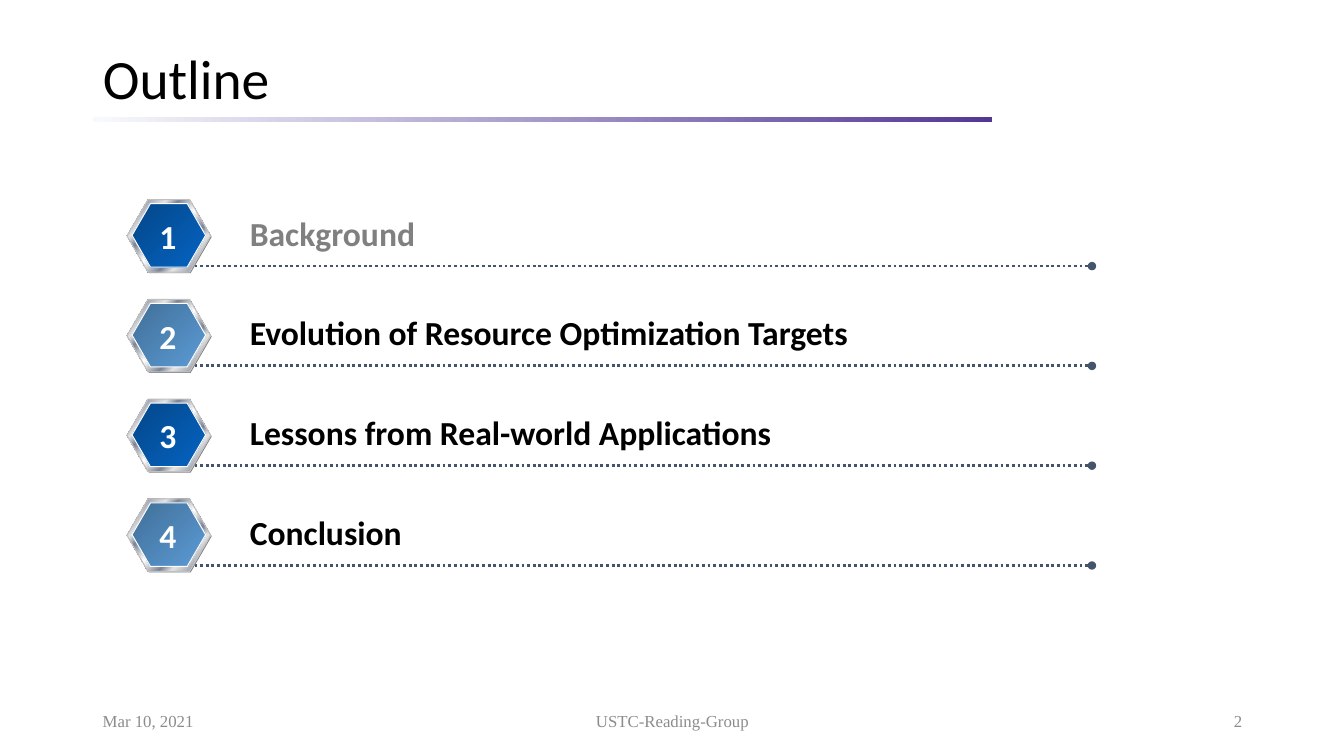
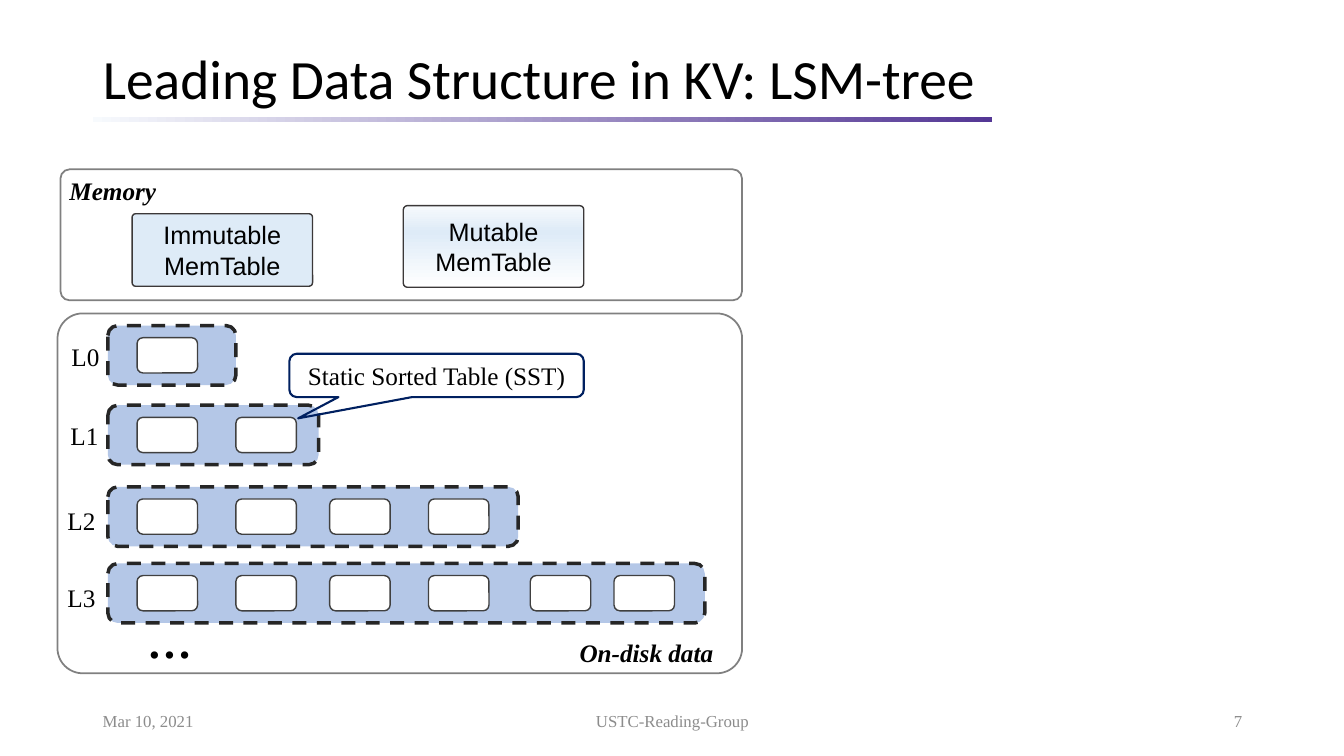
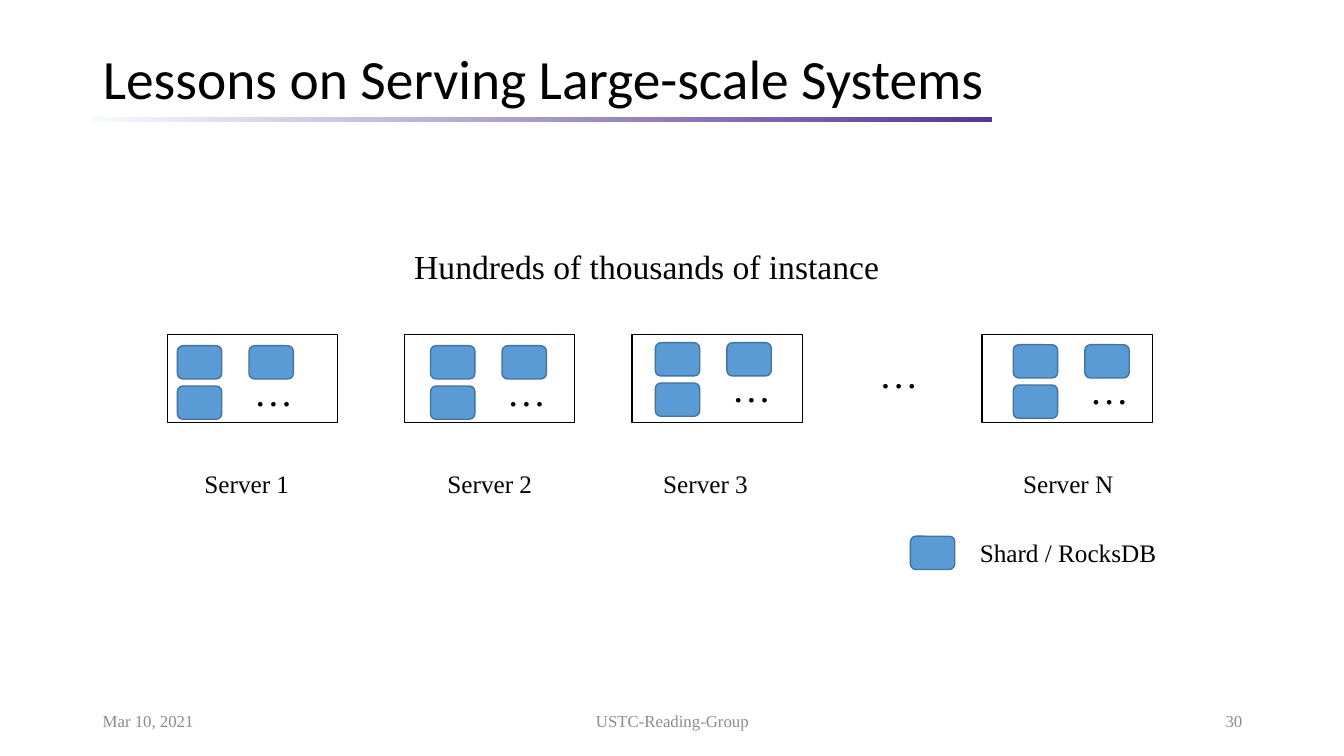
from lxml import etree
from pptx import Presentation
from pptx import util as u
from pptx.dml.color import RGBColor
from pptx.enum import dml, shapes, text
from pptx.oxml.ns import qn

SERIF, SANS, ARIAL = "Times New Roman", "Calibri", "Arial"
BLACK, WHITE, GREY, FOOTER_GREY = "000000", "FFFFFF", "808080", "8C8C8C"
DARK_BLUE, MID_BLUE = ("04478A", "0563C1"), ("416F98", "5B9BD5")
LEVEL_BLUE, SHARD_BLUE, PALE_BLUE, MIST = "B4C7E7", "5B9BD5", "DEEBF7", "F7FAFD"
METAL = list(zip((0, 7, 26, 34, 46, 50, 54, 66, 74, 93, 100),
                 ("E6E6E6", "7D8496", "E6E6E6", "7D8496", "E6E6E6", WHITE,
                  "E6E6E6", "7D8496", "E6E6E6", "7D8496", "E6E6E6")))
SHAPE = shapes.MSO_SHAPE
ALIGN = {"l": text.PP_ALIGN.LEFT, "c": text.PP_ALIGN.CENTER, "r": text.PP_ALIGN.RIGHT}
DASH, DOT = dml.MSO_LINE.DASH, dml.MSO_LINE.ROUND_DOT


def rgb(code):
    return RGBColor.from_string(code)


def write(frame, content, size=18, font=SERIF, color=BLACK, bold=False,
          italic=False, align="l", middle=False, wrap=True, spacing=None):
    frame.word_wrap = wrap
    frame.auto_size = text.MSO_AUTO_SIZE.NONE
    frame.vertical_anchor = text.MSO_ANCHOR.MIDDLE if middle else text.MSO_ANCHOR.TOP
    frame.text = content
    line = frame.paragraphs[0]
    line.alignment = ALIGN[align]
    line.line_spacing = spacing
    style = line.runs[0].font
    style.name, style.size, style.color.rgb = font, u.Pt(size), rgb(color)
    style.bold, style.italic = bold, italic


def gradient(shape, stops, angle):
    """Fill with (percent, colour) stops; the angle runs clockwise in degrees."""
    shape.fill.gradient()
    fill = shape.element.spPr.find(qn("a:gradFill"))
    stop_list = fill.find(qn("a:gsLst"))
    for old in list(stop_list):
        stop_list.remove(old)
    for percent, code in stops:
        stop = etree.SubElement(stop_list, qn("a:gs"), pos=str(percent * 1000))
        etree.SubElement(stop, qn("a:srgbClr"), val=code)
    fill.find(qn("a:lin")).set("ang", str(angle * 60000))


class Deck:
    def __init__(self):
        self.prs = Presentation()
        self.prs.slide_width, self.prs.slide_height = u.Inches(13.33), u.Inches(7.5)
        self.slide = None

    def new_slide(self, title, number):
        self.slide = self.prs.slides.add_slide(self.prs.slide_layouts[5])
        heading = self.slide.shapes.title
        heading.left, heading.top = u.Inches(0.92), u.Inches(0.43)
        heading.width, heading.height = u.Inches(11.5), u.Inches(0.75)
        write(heading.text_frame, title, size=39.6, font=SANS, middle=True, spacing=0.9)
        self.shape(SHAPE.RECTANGLE, 0.92, 1.16, 8.92, 0.05,
                   fill=[(0, MIST), (100, "543795")])
        for content, left, width, align in (("Mar 10, 2021", 0.92, 3, "l"),
                                            ("USTC-Reading-Group", 4.42, 4.5, "c"),
                                            (number, 9.42, 3, "r")):
            self.label(content, left, 6.95, width, size=12, color=FOOTER_GREY,
                       align=align, middle=True)

    def shape(self, kind, left, top, width, height, fill=None, angle=0,
              line=None, weight=1, dash=None, adjust=()):
        """Draw a preset shape; fill is a colour or a list of gradient stops."""
        shape = self.slide.shapes.add_shape(
            kind, *map(u.Inches, (left, top, width, height)))
        shape.shadow.inherit = False
        for index, value in enumerate(adjust):
            shape.adjustments[index] = value
        if fill is None:
            shape.fill.background()
        elif isinstance(fill, str):
            shape.fill.solid()
            shape.fill.fore_color.rgb = rgb(fill)
        else:
            gradient(shape, fill, angle)
        if line:
            shape.line.color.rgb = rgb(line)
            shape.line.width = u.Pt(weight)
            shape.line.dash_style = dash
        else:
            shape.line.fill.background()
        return shape

    def label(self, content, left, top, width, height=0.4, **style):
        box = self.slide.shapes.add_textbox(*map(u.Inches, (left, top, width, height)))
        write(box.text_frame, content, **style)

    def dotted_rule(self, left, right, y):
        rule = self.slide.shapes.add_connector(
            shapes.MSO_CONNECTOR.STRAIGHT, *map(u.Inches, (left, y, right, y)))
        rule.line.color.rgb = rgb("44546A")
        rule.line.width = u.Pt(2)
        rule.line.dash_style = DOT
        properties = rule.element.spPr
        etree.SubElement(properties.find(qn("a:ln")), qn("a:tailEnd"), type="oval")
        etree.SubElement(properties, qn("a:effectLst"))

    def badge(self, number, top, colors):
        hexagon = {"kind": SHAPE.HEXAGON, "adjust": (0.29,)}
        self.shape(left=1.27, top=top + 0.01, width=0.83, height=0.72,
                   fill=GREY, **hexagon)
        self.shape(left=1.26, top=top, width=0.83, height=0.72,
                   fill=METAL, angle=45, line="C0C0C0", weight=0.75, **hexagon)
        self.shape(left=1.31, top=top + 0.04, width=0.73, height=0.63,
                   fill=list(zip((0, 100), colors)), angle=45,
                   line=WHITE, weight=0.75, **hexagon)
        self.label(str(number), 1.47, top + 0.11, 0.39, 0.51, size=24, font=SANS,
                   color=WHITE, bold=True, align="c", wrap=False)

    def frame(self, left, top, width, height):
        self.shape(SHAPE.ROUNDED_RECTANGLE, left, top, width, height,
                   line=GREY, weight=1.25, adjust=(0.07,))

    def memtable(self, name, left, top, height, **fill):
        table = self.shape(SHAPE.ROUNDED_RECTANGLE, left, top, 1.79, height,
                           line="3B3838", adjust=(0.05,), **fill)
        write(table.text_frame, name, font=ARIAL, align="c", middle=True)

    def shard(self, left, top):
        self.shape(SHAPE.ROUNDED_RECTANGLE, left, top, 0.44, 0.33,
                   fill=SHARD_BLUE, line="43739E")


def outline(deck):
    deck.new_slide("Outline", "2")
    topics = ("Background", "Evolution of Resource Optimization Targets",
              "Lessons from Real-world Applications", "Conclusion")
    for index, topic in enumerate(topics):
        top = 1.98 + 0.99 * index
        deck.dotted_rule(1.93, 10.83, top + 0.66)
        deck.badge(index + 1, top, MID_BLUE if index % 2 else DARK_BLUE)
        deck.label(topic, 2.38, top + 0.08, 7.04, 0.5, size=24, font=SANS,
                   color=BLACK if index else GREY, bold=True)


def lsm_tree(deck):
    deck.new_slide("Leading Data Structure in KV: LSM-tree", "7")
    deck.frame(0.6, 1.68, 6.76, 1.3)
    deck.label("Memory", 0.59, 1.69, 1.07, bold=True, italic=True, wrap=False)
    deck.memtable("Immutable MemTable", 1.31, 2.12, 0.72, fill=PALE_BLUE)
    deck.memtable("Mutable MemTable", 4, 2.04, 0.81, angle=90,
                  fill=[(0, MIST), (32, PALE_BLUE), (100, WHITE)])

    deck.frame(0.57, 3.11, 6.79, 3.57)
    table_lefts = (1.36, 2.34, 3.27, 4.25, 5.26, 6.09)
    levels = (("L0", 3.23, 1.27, 1, 0.61, 3.34), ("L1", 4.02, 2.09, 2, 0.6, 4.12),
              ("L2", 4.83, 4.07, 4, 0.57, 4.96), ("L3", 5.59, 5.92, 6, 0.57, 5.73))
    for name, top, width, tables, name_left, name_top in levels:
        deck.shape(SHAPE.ROUNDED_RECTANGLE, 1.07, top, width, 0.59, fill=LEVEL_BLUE,
                   line="262626", weight=2.5, dash=DASH)
        for left in table_lefts[:tables]:
            deck.shape(SHAPE.ROUNDED_RECTANGLE, left, top + 0.12, 0.6, 0.35,
                       fill=WHITE, line="404040")
        deck.label(name, name_left, name_top, 0.48, wrap=False)
    deck.label("…", 1.36, 6.04, 0.58, 0.64, size=32, bold=True, wrap=False)
    deck.label("On-disk data", 5.65, 6.27, 1.54, bold=True, italic=True, wrap=False)
    callout = deck.shape(SHAPE.ROUNDED_RECTANGULAR_CALLOUT, 2.87, 3.51, 2.92, 0.43,
                         line="002060", weight=1.5, adjust=(-0.47, 0.99, 0.17))
    write(callout.text_frame, "Static Sorted Table (SST)", align="c", middle=True)


def serving(deck):
    deck.new_slide("Lessons on Serving Large-scale Systems", "30")
    deck.label("Hundreds of thousands of instance", 4.01, 2.39, 5.38, 0.5, size=24)
    servers = (("Server 1", 1.66, 1.76, 3.43, 1.93), ("Server 2", 4.01, 4.27, 3.43, 4.34),
               ("Server 3", 6.27, 6.5, 3.4, 6.48), ("Server N", 9.74, 10.05, 3.42, 10.05))
    for name, left, shard_left, shard_top, name_left in servers:
        deck.shape(SHAPE.RECTANGLE, left, 3.32, 1.69, 0.87, fill=WHITE, line=BLACK)
        for across, down in ((0, 0), (0.71, 0), (0, 0.4)):
            deck.shard(shard_left + across, shard_top + down)
        deck.label("…", shard_left + 0.66, shard_top + 0.16, 0.54, 0.57, size=28,
                   wrap=False)
        deck.label(name, name_left, 4.6, 1.27)
    deck.label("…", 8.62, 3.42, 0.6, 0.57, size=28)
    deck.shard(9.03, 5.32)
    deck.label("Shard / RocksDB", 9.62, 5.28, 3)


def main():
    deck = Deck()
    outline(deck)
    lsm_tree(deck)
    serving(deck)
    deck.prs.save("out.pptx")


if __name__ == "__main__":
    main()
